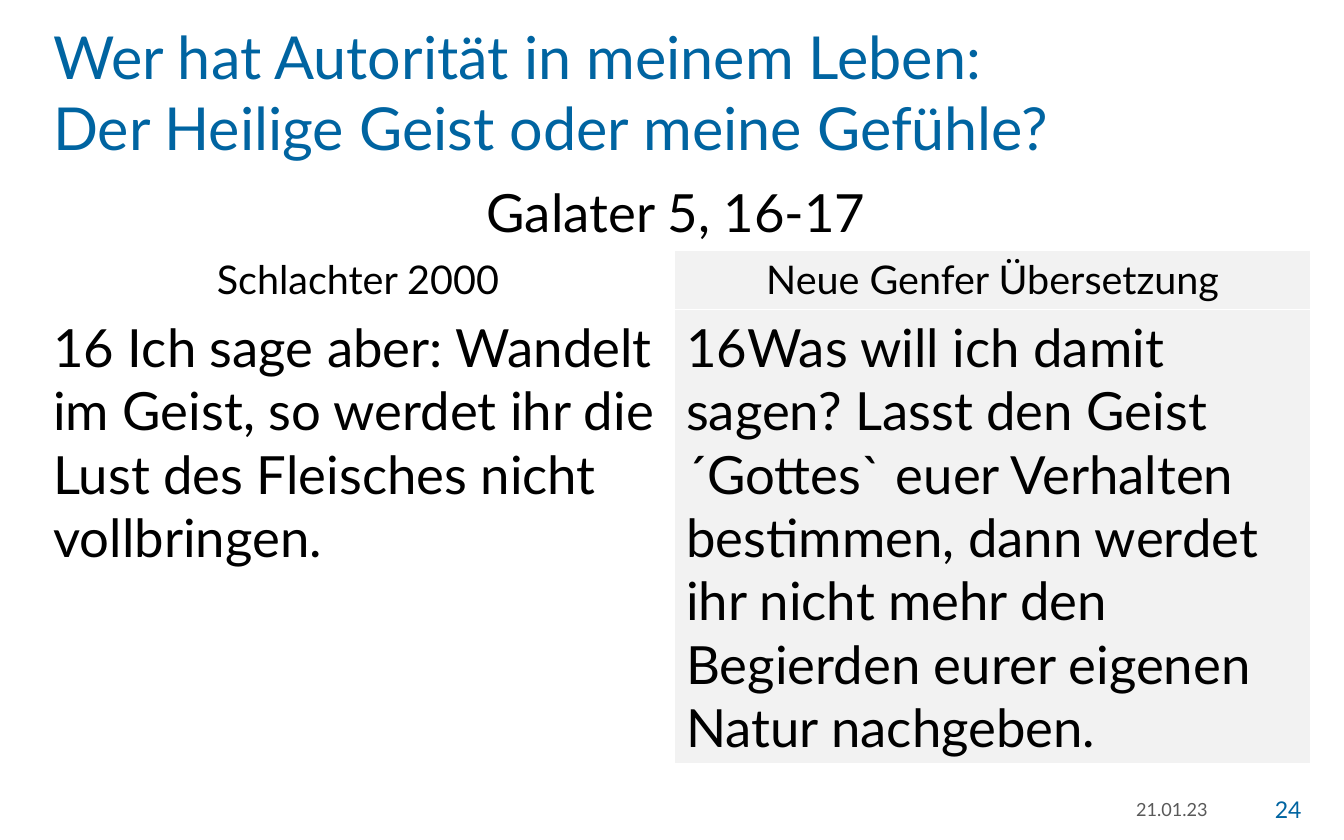
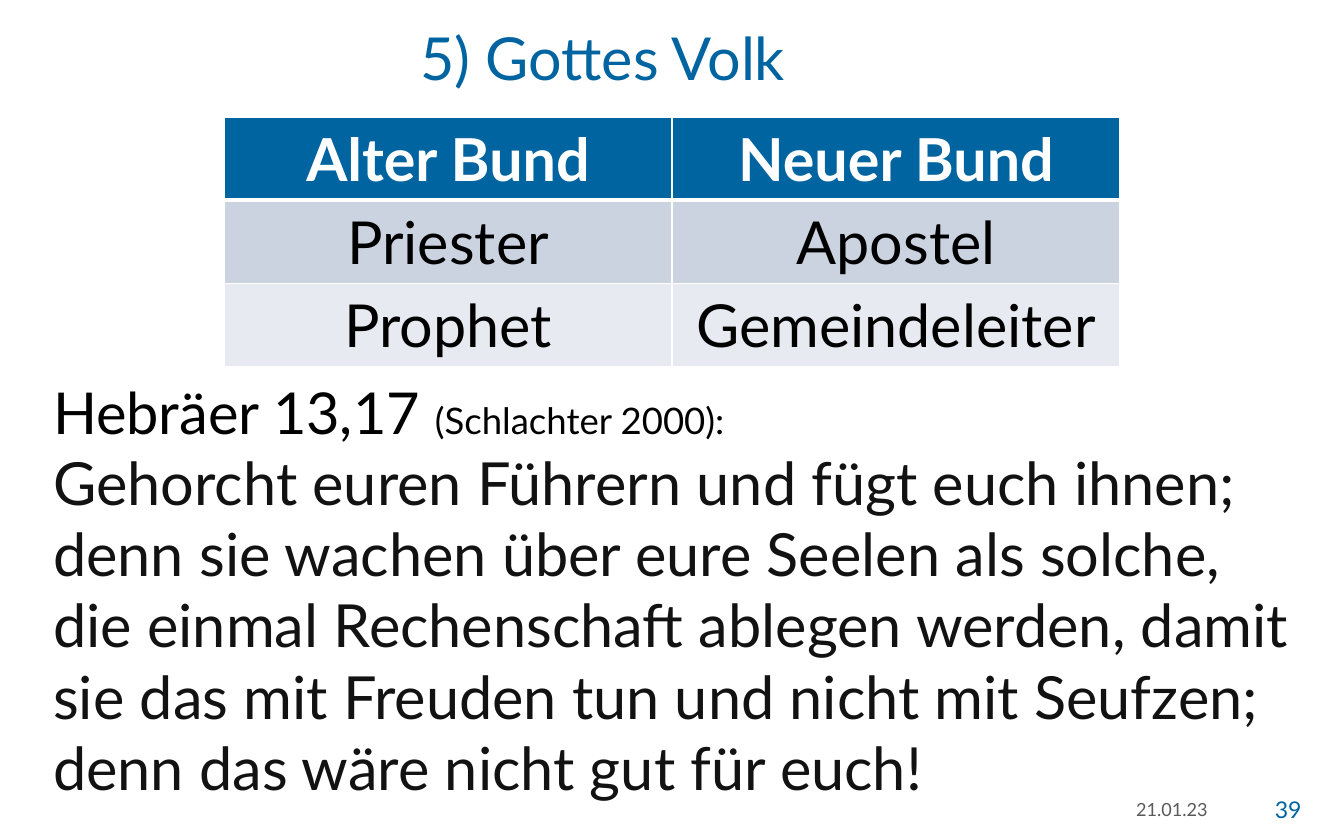
import lxml.etree
import pptx
import pptx.dml.color
import pptx.enum.text
import pptx.oxml.ns
import pptx.util

Inches = pptx.util.Inches
ALIGN = pptx.enum.text.PP_ALIGN
ANCHOR = pptx.enum.text.MSO_ANCHOR

# Shared look
FONT = "Lato"
COLOURS = {
    "blue": "0064A1", "black": "000000", "ink": "121212", "grey": "595959",
    "white": "FFFFFF", "shade": "F2F2F2", "band": "CCD3E0", "pale": "E7EAF0",
}
TITLE_SIZE = 36
FOOTER_TOP, FOOTER_HEIGHT = 6.64, 0.38
DATE = "21.01.23"


def style(text, size, colour, bold=False):
    """Set the font of a paragraph or a run."""
    text.font.name = FONT
    text.font.size = pptx.util.Pt(size)
    text.font.bold = bold
    text.font.color.rgb = pptx.dml.color.RGBColor.from_string(COLOURS[colour])


def add_text(page, place, text, size, colour, align=ALIGN.LEFT, anchor=ANCHOR.TOP):
    """Add a wrapped text box with one paragraph and return the paragraph."""
    box = page.shapes.add_textbox(*[Inches(length) for length in place])
    box.text_frame.word_wrap = True
    box.text_frame.vertical_anchor = anchor
    para = box.text_frame.paragraphs[0]
    para.text = text
    para.alignment = align
    style(para, size, colour)
    return para


deck = pptx.Presentation()
deck.slide_width, deck.slide_height = Inches(11.34), Inches(7.09)

# Cells are (text, fill); rows are (height, size, colour, bold, alignment, cells)
pages = [
    {
        "title": "Wer hat Autorität in meinem Leben:\vDer Heilige Geist oder meine Gefühle?",
        "title_place": (0.35, 0.12, 9.55, 1.15),
        "title_align": ALIGN.LEFT,
        "number": "24",
        "table_corner": (0.35, 1.47),
        "columns": (5.34, 5.37),
        "rules": (1, 1, 1, 1),
        "anchor": ANCHOR.TOP,
        "merge_first_row": True,
        "rows": [
            (0.64, 32, "black", False, ALIGN.CENTER,
             [("Galater 5, 16-17", None), ("", None)]),
            (0.49, 24, "black", False, ALIGN.CENTER,
             [("Schlachter 2000", None), ("Neue Genfer Übersetzung", "shade")]),
            (3.84, 32, "black", False, ALIGN.LEFT,
             [("16 Ich sage aber: Wandelt im Geist, so werdet ihr die Lust "
               "des Fleisches nicht vollbringen.", None),
              ("16Was will ich damit sagen? Lasst den Geist ´Gottes` euer "
               "Verhalten bestimmen, dann werdet ihr nicht mehr den Begierden "
               "eurer eigenen Natur nachgeben.", "shade")]),
        ],
    },
    {
        "title": "5) Gottes Volk",
        "title_place": (0.22, 0.13, 9.73, 0.87),
        "title_align": ALIGN.CENTER,
        "number": "39",
        "table_corner": (1.89, 0.99),
        "columns": (3.78, 3.78),
        "rules": (1, 3, 1, 1),
        "anchor": ANCHOR.MIDDLE,
        "merge_first_row": False,
        "rows": [
            (0.7, 36, "white", True, ALIGN.CENTER,
             [("Alter Bund", "blue"), ("Neuer Bund", "blue")]),
            (0.7, 36, "black", False, ALIGN.CENTER,
             [("Priester", "band"), ("Apostel", "band")]),
            (0.7, 36, "black", False, ALIGN.CENTER,
             [("Prophet", "pale"), ("Gemeindeleiter", "pale")]),
        ],
    },
]

for content in pages:
    page = deck.slides.add_slide(deck.slide_layouts[6])

    # Title and footer
    add_text(page, content["title_place"], content["title"], TITLE_SIZE, "blue",
             content["title_align"])
    add_text(page, (7.64, FOOTER_TOP, 2.65, FOOTER_HEIGHT), DATE, 11, "grey",
             ALIGN.RIGHT, ANCHOR.MIDDLE)
    add_text(page, (10.39, FOOTER_TOP, 0.69, FOOTER_HEIGHT), content["number"], 14,
             "blue", ALIGN.RIGHT, ANCHOR.MIDDLE)

    # Table frame
    rows, columns, rules = content["rows"], content["columns"], content["rules"]
    left, top = content["table_corner"]
    table = page.shapes.add_table(
        len(rows), len(columns), Inches(left), Inches(top),
        Inches(sum(columns)), Inches(sum(row[0] for row in rows))).table
    table.first_row = table.horz_banding = False
    for column, width in zip(table.columns, columns):
        column.width = Inches(width)

    # Table cells
    for row_index, (height, size, colour, bold, align, cells) in enumerate(rows):
        table.rows[row_index].height = Inches(height)
        for column_index, (text, fill) in enumerate(cells):
            cell = table.cell(row_index, column_index)
            cell.vertical_anchor = content["anchor"]
            para = cell.text_frame.paragraphs[0]
            para.text = text
            para.alignment = align
            style(para, size, colour, bold)

            # Borders come before the fill in the cell properties
            borders = {"lnL": 1, "lnR": 1, "lnT": rules[row_index],
                       "lnB": rules[row_index + 1]}
            properties = cell._tc.get_or_add_tcPr()
            for side, points in borders.items():
                line = lxml.etree.SubElement(
                    properties, pptx.oxml.ns.qn("a:" + side), w=str(pptx.util.Pt(points)))
                solid = lxml.etree.SubElement(line, pptx.oxml.ns.qn("a:solidFill"))
                lxml.etree.SubElement(solid, pptx.oxml.ns.qn("a:srgbClr"),
                                      val=COLOURS["white"])
            if fill:
                cell.fill.solid()
                cell.fill.fore_color.rgb = pptx.dml.color.RGBColor.from_string(COLOURS[fill])
            else:
                cell.fill.background()
    if content["merge_first_row"]:
        table.cell(0, 0).merge(table.cell(0, len(columns) - 1))

# Bible passage on the last page
passage = add_text(page, (0.35, 3.13, 10.65, 3.7), "", 36.1, "ink")
for text, size, colour in [
    ("Hebräer 13,17 ", 35.1, "black"),
    ("(Schlachter 2000):", 22.2, "black"),
    ("Gehorcht euren Führern und fügt euch ihnen; denn sie wachen über eure "
     "Seelen als solche, die einmal Rechenschaft ablegen werden, damit sie das "
     "mit Freuden tun und nicht mit Seufzen; denn das wäre nicht gut für euch!",
     36.1, "ink"),
]:
    span = passage.add_run()
    span.text = text
    style(span, size, colour)
    if text.endswith(":"):
        passage.add_line_break()

deck.save("out.pptx")
